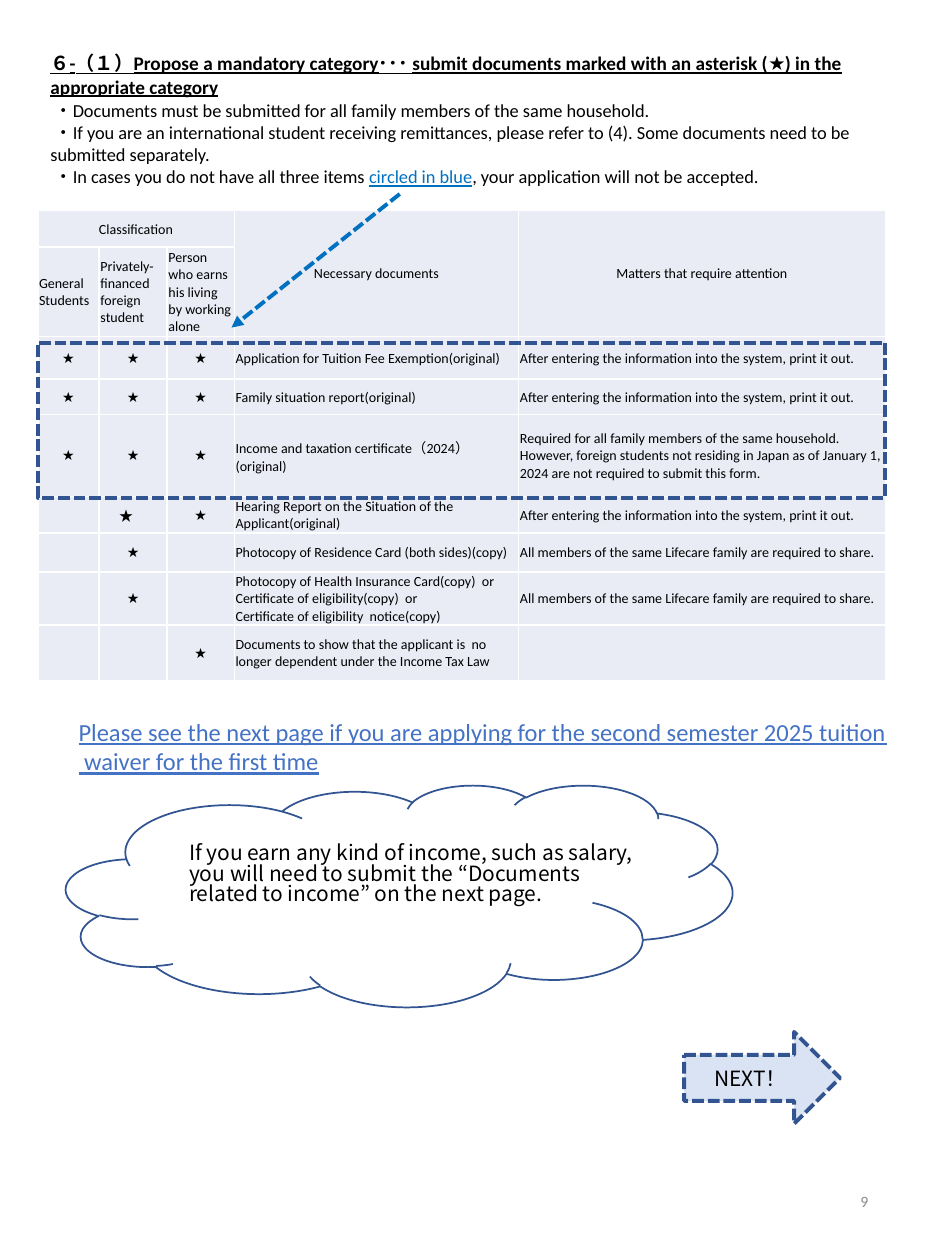
from lxml.etree import SubElement
from pptx import Presentation
from pptx.dml.color import RGBColor
from pptx.enum.dml import MSO_LINE
from pptx.enum.shapes import MSO_CONNECTOR, MSO_SHAPE
from pptx.enum.text import MSO_ANCHOR, MSO_AUTO_SIZE, PP_ALIGN
from pptx.oxml.ns import qn
from pptx.util import Inches, Pt

WIDE, HIGH = Inches(7.5), Inches(10)
NAVY, BLUE, PALE = "325491", "0070C0", "E9EBF5"
NOTO = "Noto Sans CJK JP"
COLS = [6.5, 7.2, 7.1, 30.1, 38.8]
ROWS = [2.9, 7.1, 3.4, 2.8, 6.5, 2.9, 3.1, 4, 4.4]
PRINT = "After entering the information into the system, print it out."
SHARE = "All members of the same Lifecare family are required to share."
TITLE = ("６-（１）Propose a mandatory category･･･ submit documents marked "
         "with an asterisk (★) in the appropriate category")
RULES = [
    " ・Documents must be submitted for all family members of the same household.",
    " ・If you are an international student receiving remittances, please refer "
    "to (4). Some documents need to be submitted separately.",
    [" ・In cases you do not have all three items ",
     ("circled in blue", {"color": BLUE, "under": True}),
     ", your application will not be accepted."],
]
HEADS = [["General", "Students"], ["Privately-financed foreign student"],
         ["Person who earns his living by working alone"]]
PAPERS = [
    (["★", "★", "★"], ["Application for Tuition Fee Exemption(original)"], PRINT),
    (["★", "★", "★"], ["Family situation report(original)"], PRINT),
    (["★", "★", "★"], ["Income and taxation certificate（2024）(original)"],
     "Required for all family members of the same household. However, foreign "
     "students not residing in Japan as of January 1, 2024 are not required to "
     "submit this form."),
    (["", "★　", "★"],
     ["Hearing Report on the Situation of the Applicant(original)"], PRINT),
    (["", "★", ""], ["Photocopy of Residence Card (both sides)(copy)"], SHARE),
    (["", "★", ""], ["Photocopy of Health Insurance Card(copy)  or",
                     "Certificate of eligibility(copy)  or",
                     "Certificate of eligibility  notice(copy)"], SHARE),
    (["", "", "★"], ["Documents to show that the applicant is  no",
                     "longer dependent under the Income Tax Law"], ""),
]


def hue(code):
    return RGBColor.from_string(code)


def across(share):
    return int(WIDE * share / 100)


def down(share):
    return int(HIGH * share / 100)


def area(x, y, w, h):
    return across(x), down(y), across(w), down(h)


def style(font, size, face="Calibri", color="000000", bold=False, under=False):
    font.size, font.name = Pt(size), face
    font.color.rgb = hue(color)
    font.bold, font.underline = bold, under


def text(frame, lines, align=PP_ALIGN.LEFT, anchor=MSO_ANCHOR.TOP, wrap=True,
         space=None, **form):
    frame.word_wrap, frame.vertical_anchor = wrap, anchor
    for i, line in enumerate(lines):
        para = frame.add_paragraph() if i else frame.paragraphs[0]
        para.alignment, para.line_spacing = align, space
        para.space_before = Pt(0)
        for part in [line] if isinstance(line, str) else line:
            words, extra = (part, {}) if isinstance(part, str) else part
            if words:
                run = para.add_run()
                run.text = words
                style(run.font, **{**form, **extra})
            else:
                SubElement(para._p, qn("a:endParaRPr"), sz=str(form["size"] * 100))


def holder(shape, place, lines, **form):
    shape.left, shape.top, shape.width, shape.height = area(*place)
    frame = shape.text_frame
    frame.auto_size = MSO_AUTO_SIZE.NONE
    text(frame, lines, **form)
    for para in frame.paragraphs:
        props = para._p.get_or_add_pPr()
        props.set("marL", "0")
        props.set("indent", "0")
        SubElement(props, qn("a:buNone"))


def label(slide, place, lines, **form):
    text(slide.shapes.add_textbox(*area(*place)).text_frame, lines, **form)


def stroke(line, color, width, dash=False):
    line.color.rgb, line.width = hue(color), Pt(width)
    if dash:
        line.dash_style = MSO_LINE.SQUARE_DOT


def figure(slide, kind, place, width, dash=False, fill=None):
    shape = slide.shapes.add_shape(kind, *area(*place))
    shape.shadow.inherit = False
    if fill:
        shape.fill.solid()
        shape.fill.fore_color.rgb = hue(fill)
    else:
        shape.fill.background()
    stroke(shape.line, NAVY, width, dash)
    return shape


def arrow(slide, start, end):
    line = slide.shapes.add_connector(
        MSO_CONNECTOR.STRAIGHT, across(start[0]), down(start[1]),
        across(end[0]), down(end[1]))
    stroke(line.line, BLUE, 2.25, True)
    SubElement(line.line._get_or_add_ln(), qn("a:tailEnd"), type="triangle")
    SubElement(line._element.spPr, qn("a:effectLst"))


def paint(cell):
    props = cell._tc.get_or_add_tcPr()
    for side in ("lnL", "lnR", "lnT", "lnB"):
        edge = SubElement(props, qn("a:" + side), w=str(Pt(1)))
        SubElement(SubElement(edge, qn("a:solidFill")), qn("a:srgbClr"), val="FFFFFF")
    cell.fill.solid()
    cell.fill.fore_color.rgb = hue(PALE)
    cell.margin_left = cell.margin_right = cell.margin_top = Inches(0.01)
    cell.margin_bottom = 0


def write(cell, lines, align=PP_ALIGN.LEFT):
    text(cell.text_frame, lines, align, size=8)
    cell.vertical_anchor = MSO_ANCHOR.MIDDLE


def grid(slide):
    place = area(4, 16.7, sum(COLS), sum(ROWS))
    table = slide.shapes.add_table(len(ROWS), len(COLS), *place).table
    table.first_row = table.horz_banding = False
    for col, share in zip(table.columns, COLS):
        col.width = across(share)
    for row, share in zip(table.rows, ROWS):
        row.height = down(share)
    for cell in table.iter_cells():
        paint(cell)
    table.cell(0, 0).merge(table.cell(0, 2))
    for col in (3, 4):
        table.cell(0, col).merge(table.cell(1, col))
    tops = {0: "Classification", 3: "Necessary documents",
            4: "Matters that require attention"}
    for col, words in tops.items():
        write(table.cell(0, col), [words], PP_ALIGN.CENTER)
    for col, lines in enumerate(HEADS):
        write(table.cell(1, col), lines)
    for row, (marks, names, note) in enumerate(PAPERS, 2):
        for col, mark in enumerate(marks):
            write(table.cell(row, col), [mark], PP_ALIGN.CENTER)
        write(table.cell(row, 3), names)
        write(table.cell(row, 4), [note])


def main():
    deck = Presentation()
    deck.slide_width, deck.slide_height = WIDE, HIGH
    slide = deck.slides.add_slide(deck.slide_layouts[1])
    title, body = slide.placeholders
    holder(title, (4, 3.6, 92.5, 4.3), [TITLE], size=11, bold=True, under=True)
    holder(body, (4, 7.4, 92.5, 8.1), RULES, size=10.5)
    grid(slide)
    figure(slide, MSO_SHAPE.RECTANGLE, (4, 27.2, 89.7, 12.3), 2.25, True)
    arrow(slide, (42.3, 15.4), (24.5, 26))
    label(slide, (7, 56.4, 89.1, 5.7),
          ["Please see the next page if you are applying for the second "
           "semester 2025 tuition", " waiver for the first time"],
          wrap=False, size=14, color="4472C4", under=True)
    figure(slide, MSO_SHAPE.CLOUD, (7, 62.3, 70.5, 17.6), 1)
    label(slide, (18.7, 66.5, 50.1, 9.1),
          ["If you earn any kind of income, such as salary, you will need to "
           "submit the “Documents related to income” on the next page."],
          space=0.82, size=12, face=NOTO)
    following = figure(slide, MSO_SHAPE.RIGHT_ARROW, (72.4, 81.9, 16.5, 7.3),
                       2.25, True, "DAE3F3")
    text(following.text_frame, ["NEXT！"], PP_ALIGN.CENTER, MSO_ANCHOR.MIDDLE,
         size=12, face=NOTO)
    label(slide, (70.7, 92.7, 22.5, 5.3), ["9"], align=PP_ALIGN.RIGHT,
          anchor=MSO_ANCHOR.MIDDLE, size=9, color="8C8C8C")
    deck.save("out.pptx")


if __name__ == "__main__":
    main()
